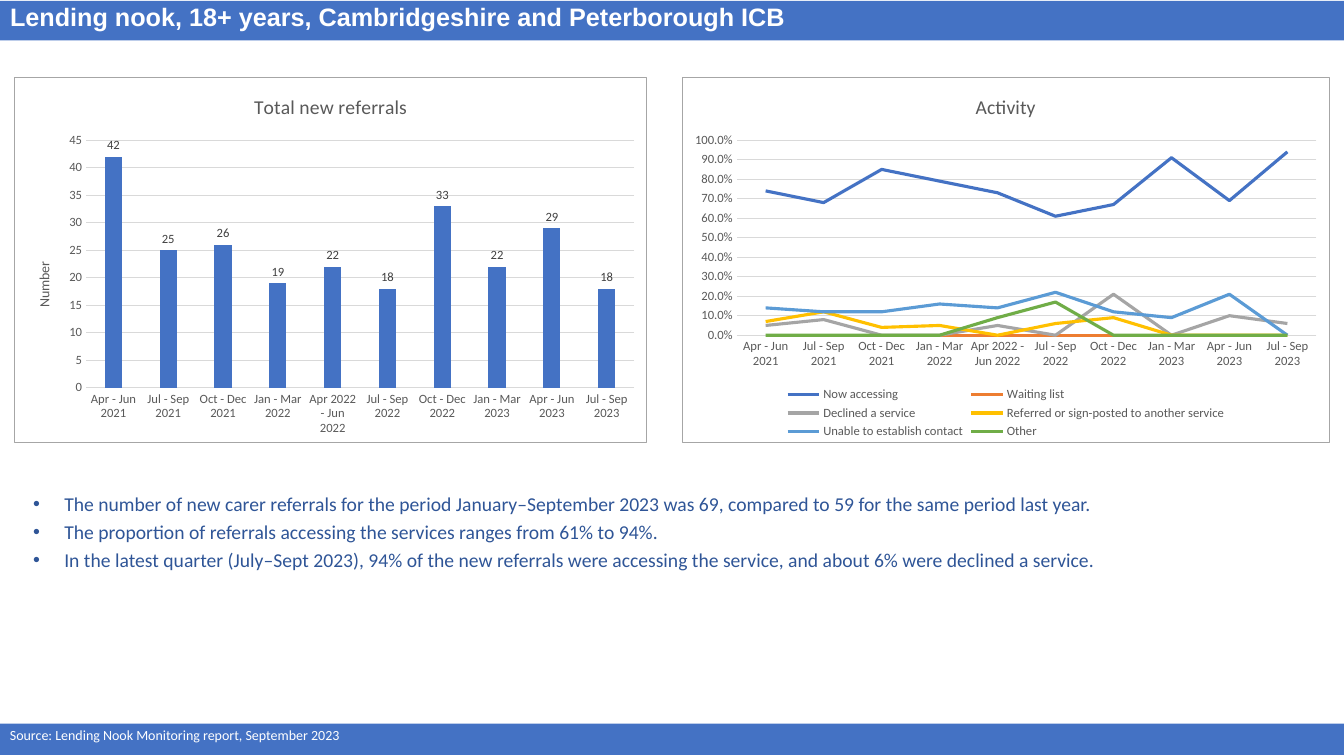
"""Build the carer referrals slide with two charts and three findings."""
from dataclasses import dataclass

from lxml.etree import SubElement
from pptx import Presentation
from pptx.chart.data import CategoryChartData
from pptx.dml.color import RGBColor
from pptx.enum.chart import XL_CHART_TYPE, XL_LABEL_POSITION, XL_LEGEND_POSITION, XL_TICK_MARK
from pptx.enum.shapes import MSO_SHAPE
from pptx.enum.text import MSO_ANCHOR, MSO_AUTO_SIZE, PP_ALIGN
from pptx.oxml import parse_xml
from pptx.oxml.ns import nsdecls, qn
from pptx.util import Inches, Pt

TITLE = "Lending nook, 18+ years, Cambridgeshire and Peterborough ICB"
SOURCE = "Source: Lending Nook Monitoring report, September 2023"
NOTES = [
    "The number of new carer referrals for the period January–September 2023 was 69, compared to 59 for the same period last year.",
    "The proportion of referrals accessing the services ranges from 61% to 94%.",
    "In the latest quarter (July–Sept 2023), 94% of the new referrals were accessing the service, and about 6% were declined a service.",
]
TERMS = [
    "Apr - Jun 2021", "Jul - Sep 2021", "Oct - Dec 2021", "Jan - Mar 2022", "Apr 2022 - Jun 2022",
    "Jul - Sep 2022", "Oct - Dec 2022", "Jan - Mar 2023", "Apr - Jun 2023", "Jul - Sep 2023",
]
NEW = {"Total new referrals": [42, 25, 26, 19, 22, 18, 33, 22, 29, 18]}
RATES = {
    "Now accessing": [0.74, 0.68, 0.85, 0.79, 0.73, 0.61, 0.67, 0.91, 0.69, 0.94],
    "Waiting list": [0] * len(TERMS),
    "Declined a service": [0.05, 0.08, 0, 0, 0.05, 0, 0.21, 0, 0.1, 0.06],
    "Referred or sign-posted to another service": [0.07, 0.12, 0.04, 0.05, 0, 0.06, 0.09, 0, 0, 0],
    "Unable to establish contact": [0.14, 0.12, 0.12, 0.16, 0.14, 0.22, 0.12, 0.09, 0.21, 0],
    "Other": [0, 0, 0, 0, 0.09, 0.17, 0, 0, 0, 0],
}
BARS = [(0, 0.01, 13.33, 0.39), (0, 7.18, 13.33, 0.31)]


@dataclass(frozen=True)
class Theme:
    """Hold the colours, fonts and type sizes."""
    blue: str = "4472C4"
    navy: str = "2F5597"
    white: str = "FFFFFF"
    black: str = "000000"
    grey: str = "595959"
    dark: str = "404040"
    grid: str = "D9D9D9"
    edge: str = "A6A6A6"
    lines: tuple = ("4472C4", "ED7D31", "A5A5A5", "FFC000", "5B9BD5", "70AD47")
    head: str = "Arial"
    body: str = "Calibri"
    big: int = 18
    mid: int = 14
    small: int = 10
    tiny: int = 9


LOOK = Theme()


def put(item, **vals):
    """Set each attribute from the given values."""
    for name, value in vals.items():
        setattr(item, name, value)


def style(font, size, tint, face=LOOK.body, bold=False):
    """Format a font."""
    put(font, size=Pt(size), name=face, bold=bold)
    font.color.rgb = RGBColor.from_string(tint)


def rule(line, tint, width=0.75):
    """Format a line."""
    line.color.rgb = RGBColor.from_string(tint)
    line.width = Pt(width)


def paint(fill, tint):
    """Give a solid fill."""
    fill.solid()
    fill.fore_color.rgb = RGBColor.from_string(tint)


def write(frame, lines, size, tint, face=LOOK.body, bold=False, space=1.0):
    """Write one paragraph per line and return the paragraphs."""
    put(frame, word_wrap=True, auto_size=MSO_AUTO_SIZE.NONE)
    frame.text = "\n".join(lines)
    for para in frame.paragraphs:
        put(para, alignment=PP_ALIGN.LEFT, line_spacing=space)
        style(para.runs[0].font, size, tint, face, bold)
    return frame.paragraphs


def name(part, text, size):
    """Give a chart or an axis its title."""
    frame = part.text_frame
    frame.text = text
    style(frame.paragraphs[0].runs[0].font, size, LOOK.grey)


def plot(slide, kind, box, title, rows, form):
    """Add a framed chart with plain axes."""
    data = CategoryChartData(number_format=form)
    data.categories = TERMS
    for label, vals in rows.items():
        data.add_series(label, vals)
    chart = slide.shapes.add_chart(kind, *map(Inches, box), data).chart
    style(chart.font, LOOK.small, LOOK.black)
    chart.has_title = True
    name(chart.chart_title, title, LOOK.mid)
    chart.has_legend = False
    chart.plots[0].vary_by_categories = False
    for axis in (chart.category_axis, chart.value_axis):
        put(axis, major_tick_mark=XL_TICK_MARK.NONE, minor_tick_mark=XL_TICK_MARK.NONE)
        style(axis.tick_labels.font, LOOK.tiny, LOOK.grey)
    rule(chart.category_axis.format.line, LOOK.grid)
    axis = chart.value_axis
    axis.format.line.fill.background()
    rule(axis.major_gridlines.format.line, LOOK.grid)
    put(axis.tick_labels, number_format=form, number_format_is_linked=False)
    frame = parse_xml(
        f'<c:spPr {nsdecls("c", "a")}><a:solidFill><a:srgbClr val="{LOOK.white}"/></a:solidFill>'
        f'<a:ln w="{Pt(0.75)}"><a:solidFill><a:srgbClr val="{LOOK.edge}"/></a:solidFill></a:ln></c:spPr>')
    chart.element.find(qn("c:chart")).addnext(frame)
    return chart


def main():
    """Compose and save the slide."""
    deck = Presentation()
    put(deck, slide_width=Inches(13.33), slide_height=Inches(7.5))
    slide = deck.slides.add_slide(deck.slide_layouts[5])
    head = slide.shapes.title
    put(head, left=0, top=0, width=Inches(13.33), height=Inches(0.37))
    write(head.text_frame, [TITLE], LOOK.big, LOOK.white, LOOK.head, True, 0.9)
    head.text_frame.vertical_anchor = MSO_ANCHOR.MIDDLE
    for box in BARS:
        bar = slide.shapes.add_shape(MSO_SHAPE.RECTANGLE, *map(Inches, box))
        bar.shadow.inherit = False
        paint(bar.fill, LOOK.blue)
        bar.line.fill.background()
        head.element.addprevious(bar.element)
    foot = slide.shapes.add_textbox(0, Inches(7.16), Inches(10.46), Inches(0.27))
    write(foot.text_frame, [SOURCE], LOOK.small, LOOK.white)

    rates = plot(slide, XL_CHART_TYPE.LINE, (6.76, 0.76, 6.43, 3.64), "Activity", RATES, "0.0%")
    put(rates.value_axis, minimum_scale=0, maximum_scale=1, major_unit=0.1)
    for row, tint in zip(rates.plots[0].series, LOOK.lines):
        row.smooth = False
        rule(row.format.line, tint, 2.25)
    rates.has_legend = True
    put(rates.legend, position=XL_LEGEND_POSITION.BOTTOM, include_in_layout=False)
    style(rates.legend.font, LOOK.tiny, LOOK.grey)

    new = plot(slide, XL_CHART_TYPE.COLUMN_CLUSTERED, (0.14, 0.76, 6.28, 3.64), *NEW, NEW, "General")
    put(new.value_axis, minimum_scale=0, maximum_scale=45, major_unit=5)
    name(new.value_axis.axis_title, "Number", LOOK.small)
    bars = new.plots[0]
    put(bars, gap_width=219, overlap=-27, has_data_labels=True)
    put(bars.data_labels, show_value=True, position=XL_LABEL_POSITION.OUTSIDE_END)
    style(bars.data_labels.font, LOOK.tiny, LOOK.dark)
    paint(bars.series[0].format.fill, LOOK.blue)

    notes = slide.shapes.add_textbox(*map(Inches, (0.23, 4.78, 12.87, 1.21)))
    for para in write(notes.text_frame, NOTES, LOOK.mid, LOOK.navy, space=1.2):
        props = para._p.get_or_add_pPr()
        props.set("marL", str(Inches(0.31)))
        props.set("indent", str(Inches(-0.31)))
        SubElement(props, qn("a:buFont")).set("typeface", LOOK.head)
        SubElement(props, qn("a:buChar")).set("char", "•")
    deck.save("out.pptx")


if __name__ == "__main__":
    main()
